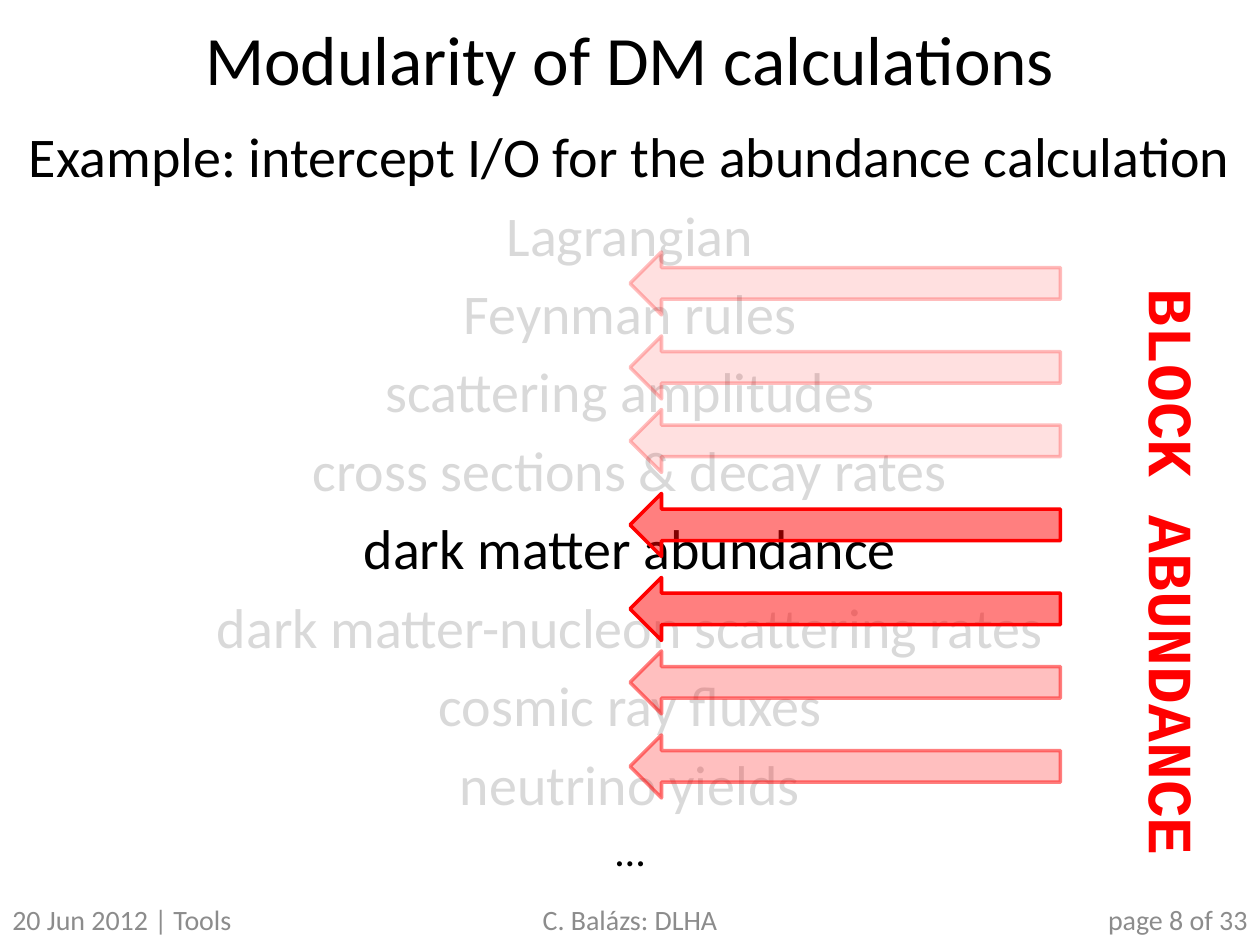
from typing import NamedTuple

from lxml.etree import SubElement
from pptx import Presentation
from pptx.dml.color import RGBColor
from pptx.enum.shapes import MSO_SHAPE as Shape
from pptx.enum.text import MSO_ANCHOR as Anchor, PP_ALIGN as Align
from pptx.oxml.ns import qn
from pptx.util import Inches, Pt

# Grid of 120 columns by 90 rows on a 10 x 7.5 inch slide
CELL = Inches(1) / 12
COLORS = {"black": "000000", "faded": "D9D9D9", "footer": "8C8C8C", "red": "FF0000"}


class Box(NamedTuple):
    col: float
    row: float
    cols: float
    rows: float

    def emu(self) -> list[int]:
        return [round(value * CELL) for value in self]


class Line(NamedTuple):
    text: str
    size: float
    color: str = "black"
    font: str = "Calibri"
    bold: bool = False


class Arrow(NamedTuple):
    row: float  # row of the arrow's axis
    fill_alpha: int
    line_alpha: int


def add_text(slide, box: Box, lines: list[Line], align=Align.CENTER,
             anchor=Anchor.MIDDLE, space_before: int = 0, vertical: bool = False) -> None:
    frame = slide.shapes.add_textbox(*box.emu()).text_frame
    for name, value in {"word_wrap": True, "vertical_anchor": anchor}.items():
        setattr(frame, name, value)
    if vertical:
        frame._txBody.bodyPr.set("vert", "vert")
    for index, line in enumerate(lines):
        paragraph = frame.add_paragraph() if index else frame.paragraphs[0]
        paragraph.alignment = align
        if space_before:
            before = SubElement(paragraph._p.get_or_add_pPr(), qn("a:spcBef"))
            SubElement(before, qn("a:spcPct")).set("val", str(space_before * 1000))
        run = paragraph.add_run()
        run.text = line.text
        style = {"name": line.font, "size": Pt(line.size), "bold": line.bold}
        for name, value in style.items():
            setattr(run.font, name, value)
        run.font.color.rgb = RGBColor.from_string(COLORS[line.color])


def paint(fill, color: str, alpha: int) -> None:
    fill.solid()
    fill.fore_color.rgb = RGBColor.from_string(COLORS[color])
    if alpha < 100:
        rgb = fill._xPr.find(qn("a:solidFill")).find(qn("a:srgbClr"))
        SubElement(rgb, qn("a:alpha")).set("val", str(alpha * 1000))


def add_arrow(slide, arrow: Arrow, left: float = 60, length: float = 41,
              width: float = 6) -> None:
    # A down arrow turned a quarter about its centre points left
    box = Box(left + (length - width) / 2, arrow.row - length / 2, width, length)
    shape = slide.shapes.add_shape(Shape.DOWN_ARROW, *box.emu())
    shape.rotation = 90
    shape.shadow.inherit = False
    paint(shape.fill, "red", arrow.fill_alpha)
    paint(shape.line.fill, "red", arrow.line_alpha)
    shape.line.width = Pt(2)


STEPS = [
    Line("Example: intercept I/O for the abundance calculation", 32),
    Line("Lagrangian", 32, "faded"),
    Line("Feynman rules", 32, "faded"),
    Line("scattering amplitudes", 32, "faded"),
    Line("cross sections & decay rates", 32, "faded"),
    Line("dark matter abundance", 32),
    Line("dark matter-nucleon scattering rates", 32, "faded"),
    Line("cosmic ray fluxes", 32, "faded"),
    Line("neutrino yields", 32, "faded"),
    Line("…", 24),
]
FOOTERS = [
    ("20 Jun 2012 | Tools", 0, 24, Align.LEFT),
    ("C. Balázs: DLHA", 25, 70, Align.CENTER),
    ("page 8 of 33", 96, 24, Align.RIGHT),
]
ARROWS = [
    Arrow(27, 12, 25), Arrow(35, 12, 25), Arrow(42, 12, 25),
    Arrow(50, 50, 100), Arrow(58, 50, 100),
    Arrow(65, 25, 50), Arrow(73, 25, 50),
]


def main() -> None:
    deck = Presentation()
    deck.slide_width, deck.slide_height = Inches(10), Inches(7.5)
    slide = deck.slides.add_slide(deck.slide_layouts[6])

    # Title and calculation steps
    add_text(slide, Box(0, 1, 120, 9), [Line("Modularity of DM calculations", 39.6)])
    add_text(slide, Box(1, 11, 118, 75), STEPS, anchor=Anchor.TOP, space_before=20)

    # Footer
    for text, col, cols, align in FOOTERS:
        add_text(slide, Box(col, 85.2, cols, 4.8), [Line(text, 16, "footer")], align)

    # Arrows from the data block into the steps
    for arrow in ARROWS:
        add_arrow(slide, arrow)
    add_text(slide, Box(101, 23, 15, 63),
             [Line("BLOCK ABUNDANCE", 36, "red", "Courier New", True)],
             anchor=Anchor.TOP, vertical=True)

    deck.save("out.pptx")


if __name__ == "__main__":
    main()
